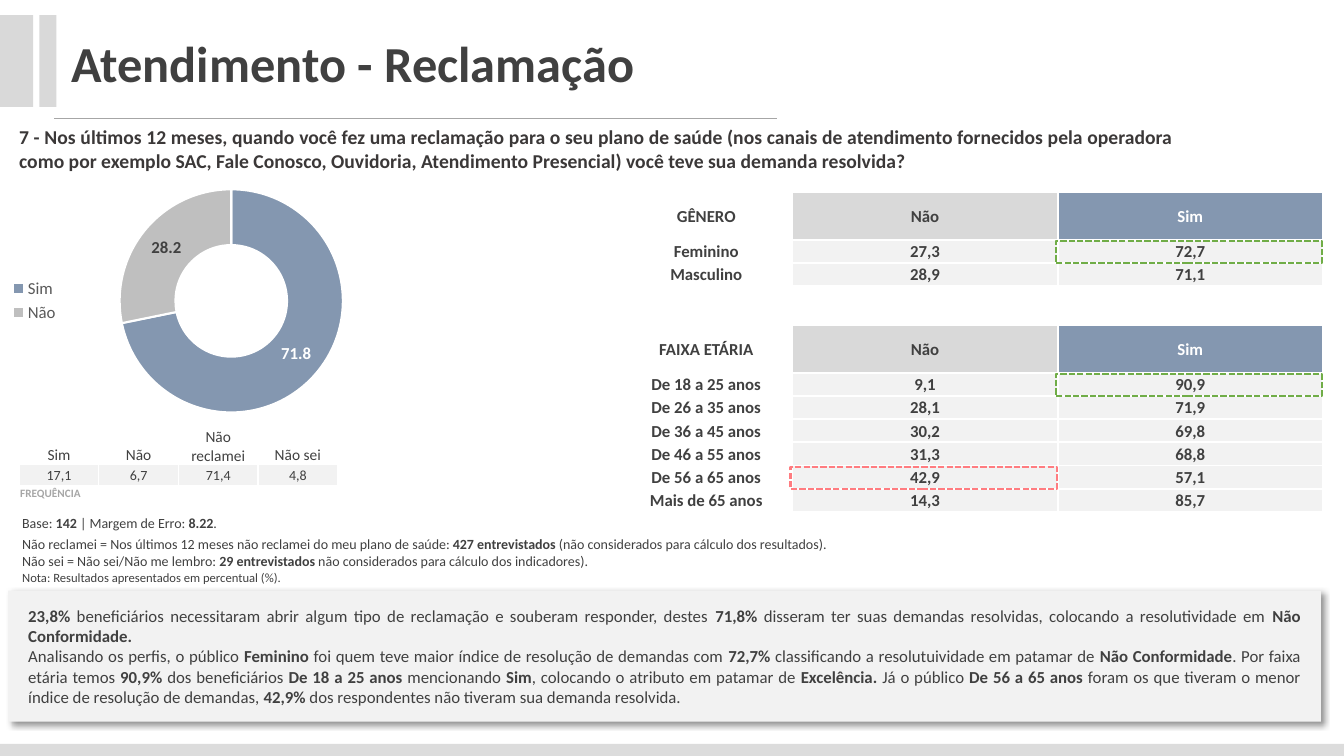
import dataclasses

import lxml.etree
import pptx
import pptx.chart.data
import pptx.dml.color
import pptx.enum.chart
import pptx.enum.dml
import pptx.enum.shapes
import pptx.enum.text
import pptx.oxml
import pptx.oxml.ns
import pptx.util

Inches = pptx.util.Inches
ALIGN = pptx.enum.text.PP_ALIGN
ANCHOR = pptx.enum.text.MSO_ANCHOR
DML = "http://schemas.openxmlformats.org/drawingml/2006/main"


@dataclasses.dataclass(frozen=True)
class Theme:
    font: str = "Calibri"
    dark: str = "404040"
    question: str = "3B3838"
    legend: str = "595959"
    muted: str = "A6A6A6"
    bar: str = "D9D9D9"
    footer: str = "DCDCDC"
    pale: str = "F2F2F2"
    white: str = "FFFFFF"
    yes: str = "8497B0"
    no: str = "BFBFBF"
    best: str = "70AD47"
    worst: str = "FF7C80"
    title_size: int = 36
    question_size: int = 14
    body_size: int = 12
    header_size: int = 11
    small_size: int = 10
    note_size: int = 9
    tag_size: int = 8


T = Theme()

QUESTION = ("7 - Nos últimos 12 meses, quando você fez uma reclamação para o seu plano de saúde "
            "(nos canais de atendimento fornecidos pela operadora como por exemplo SAC, Fale Conosco, "
            "Ouvidoria, Atendimento Presencial) você teve sua demanda resolvida?")
ANALYSIS = (
    "**23,8%** beneficiários necessitaram abrir algum tipo de reclamação e souberam responder, destes "
    "**71,8%** disseram ter suas demandas resolvidas, colocando a resolutividade em **Não Conformidade.**\n"
    "Analisando os perfis, o público **Feminino** foi quem teve maior índice de resolução de demandas com "
    "**72,7%** classificando a resolutuividade em patamar de **Não Conformidade**. Por faixa etária temos "
    "**90,9% **dos beneficiários **De 18 a 25 anos **mencionando **Sim**, colocando o atributo em patamar de "
    "**Excelência. **Já o público **De 56 a 65 anos **foram os que tiveram o menor índice de resolução de "
    "demandas, **42,9%** dos respondentes não tiveram sua demanda resolvida.")
NOTES = [
    "Base: **142** | Margem de Erro: **8.22**.",
    "Não reclamei = Nos últimos 12 meses não reclamei do meu plano de saúde: **427 entrevistados **"
    "(não considerados para cálculo dos resultados).\n"
    "Não sei = Não sei/Não me lembro: **29 entrevistados** não considerados para cálculo dos indicadores).",
    "Nota: Resultados apresentados em percentual (%).",
]
PROFILES = [
    ("GÊNERO", "Não", "Sim"),
    ("Feminino", "27,3", "72,7"),
    ("Masculino", "28,9", "71,1"),
    ("", "", ""),
    ("FAIXA ETÁRIA", "Não", "Sim"),
    ("De 18 a 25 anos", "9,1", "90,9"),
    ("De 26 a 35 anos", "28,1", "71,9"),
    ("De 36 a 45 anos", "30,2", "69,8"),
    ("De 46 a 55 anos", "31,3", "68,8"),
    ("De 56 a 65 anos", "42,9", "57,1"),
    ("Mais de 65 anos", "14,3", "85,7"),
]
FREQUENCIES = [("Sim", "Não", "Não reclamei", "Não sei"), ("17,1", "6,7", "71,4", "4,8")]


def rgb(value):
    return pptx.dml.color.RGBColor.from_string(value)


def set_font(font, size, color, bold=False):
    font.name, font.size, font.bold = T.font, pptx.util.Pt(size), bold
    font.color.rgb = rgb(color)


def write(tf, text, size=T.body_size, color=T.dark, bold=False, align=ALIGN.LEFT):
    for i, line in enumerate(text.split("\n")):
        p = tf.add_paragraph() if i else tf.paragraphs[0]
        p.alignment = align
        for j, part in enumerate(line.split("**")):
            if part:
                r = p.add_run()
                r.text = part
                set_font(r.font, size, color, bold or j % 2 == 1)
        if not line:
            end = lxml.etree.SubElement(p._p, pptx.oxml.ns.qn("a:endParaRPr"))
            end.set("sz", str(size * 100))


def set_frame(tf, x, y, anchor=ANCHOR.TOP):
    tf.word_wrap, tf.vertical_anchor = True, anchor
    tf.margin_left = tf.margin_right = Inches(x)
    tf.margin_top = tf.margin_bottom = Inches(y)


def add_rect(s, left, top, width, height, fill=None, line=None):
    sp = s.shapes.add_shape(pptx.enum.shapes.MSO_SHAPE.RECTANGLE,
                            Inches(left), Inches(top), Inches(width), Inches(height))
    sp.shadow.inherit = False
    if fill:
        sp.fill.solid()
        sp.fill.fore_color.rgb = rgb(fill)
    else:
        sp.fill.background()
    if line:
        sp.line.color.rgb = rgb(line)
        sp.line.width = pptx.util.Pt(1.5)
        sp.line.dash_style = pptx.enum.dml.MSO_LINE.SQUARE_DOT
    else:
        sp.line.fill.background()
    return sp


def add_shadow(sp):
    effects = sp._element.spPr.find(pptx.oxml.ns.qn("a:effectLst"))
    effects.append(pptx.oxml.parse_xml(
        f'<a:outerShdw xmlns:a="{DML}" blurRad="{pptx.util.Pt(4)}" dist="{pptx.util.Pt(3)}" dir="2700000" '
        'algn="tl" rotWithShape="0"><a:srgbClr val="000000"><a:alpha val="40000"/></a:srgbClr></a:outerShdw>'))


def add_rule(s, x1, x2, y):
    c = s.shapes.add_connector(pptx.enum.shapes.MSO_CONNECTOR.STRAIGHT,
                               Inches(x1), Inches(y), Inches(x2), Inches(y))
    c.line.color.rgb = rgb(T.muted)
    c.line.width = pptx.util.Pt(0.5)
    lxml.etree.SubElement(c._element.spPr, pptx.oxml.ns.qn("a:effectLst"))


def add_table(s, left, top, cols, rows):
    table = s.shapes.add_table(len(rows), len(cols), Inches(left), Inches(top),
                               Inches(sum(cols)), Inches(sum(rows))).table
    table.first_row = table.horz_banding = False
    for col, width in zip(table.columns, cols):
        col.width = Inches(width)
    for row, height in zip(table.rows, rows):
        row.height = Inches(height)
    return table


def fill_cell(cell, text, fill=None, border=None, anchor=ANCHOR.MIDDLE, **fmt):
    cell.margin_left = cell.margin_right = cell.margin_top = Inches(0.01)
    cell.margin_bottom = 0
    cell.vertical_anchor = anchor
    if border:
        for side in ("lnL", "lnR", "lnT", "lnB"):
            cell._tc.get_or_add_tcPr().append(pptx.oxml.parse_xml(
                f'<a:{side} xmlns:a="{DML}" w="{pptx.util.Pt(border)}"><a:solidFill>'
                f'<a:srgbClr val="{T.white}"/></a:solidFill></a:{side}>'))
    if fill:
        cell.fill.solid()
        cell.fill.fore_color.rgb = rgb(fill)
    else:
        cell.fill.background()
    write(cell.text_frame, text, **fmt)


def add_profiles(s):
    left, top, cols = 6.15, 1.91, [1.71, 2.63, 2.63]
    rows = [0.47 if row[1] == "Não" else 0.23 if row[0] else 0.39 for row in PROFILES]
    table = add_table(s, left, top, cols, rows)
    for i, row in enumerate(PROFILES):
        fills = (None, T.bar, T.yes) if row[1] == "Não" else (None, T.pale, T.pale)
        for j, text in enumerate(row):
            fill_cell(table.cell(i, j), text, fills[j] if text else None, 1.5 if j else None, bold=True,
                      color=T.white if text == "Sim" else T.dark, align=ALIGN.CENTER)
    for i, j, color in ((9, 1, T.worst), (5, 2, T.best), (1, 2, T.best)):
        add_rect(s, left + sum(cols[:j]) - 0.02, top + sum(rows[:i]) + 0.01, 2.64, 0.22, line=color)


def add_notes(s):
    table = add_table(s, 0.21, 5.1, [4.06] * 2, [0.21, 0.34, 0.21])
    for i in (0, 1):
        table.cell(i, 0).merge(table.cell(i, 1))
    for i, (text, size) in enumerate(zip(NOTES, (T.small_size, T.small_size, T.note_size))):
        for j, content in enumerate((text, "")):
            fill_cell(table.cell(i, j), content, anchor=ANCHOR.TOP, size=size)


def add_frequencies(s):
    table = add_table(s, 0.19, 4.23, [0.79] * 4, [0.33, 0.21, 0.21])
    for j, (name, value) in enumerate(zip(*FREQUENCIES)):
        fill_cell(table.cell(0, j), name, border=1, anchor=ANCHOR.BOTTOM, size=T.header_size, align=ALIGN.CENTER)
        fill_cell(table.cell(1, j), value, T.pale, 1, size=T.small_size, align=ALIGN.CENTER)
    table.cell(2, 0).merge(table.cell(2, 2))
    for j, text in enumerate(("FREQUÊNCIA", "", "", "")):
        fill_cell(table.cell(2, j), text, border=1, anchor=ANCHOR.TOP, size=T.tag_size, color=T.muted, bold=True)


def add_doughnut(s):
    data = pptx.chart.data.CategoryChartData(number_format="0.0")
    data.categories = ["Sim", "Não"]
    data.add_series("Series 1", (71.8, 28.2))
    chart = s.shapes.add_chart(pptx.enum.chart.XL_CHART_TYPE.DOUGHNUT, Inches(0), Inches(1.74),
                               Inches(3.98), Inches(2.49), data).chart
    chart.has_title = False
    set_font(chart.font, T.small_size, T.dark)
    chart.has_legend = True
    chart.legend.position = pptx.enum.chart.XL_LEGEND_POSITION.LEFT
    chart.legend.include_in_layout = False
    set_font(chart.legend.font, T.body_size, T.legend)
    plot = chart.plots[0]
    plot.vary_by_categories = True
    series = plot.series[0]
    labels = series.data_labels
    labels.show_value, labels.show_percentage = True, False
    labels.number_format, labels.number_format_is_linked = "0.0", False
    set_font(labels.font, T.body_size, T.white, True)
    for i, color in enumerate((T.yes, T.no)):
        fmt = series.points[i].format
        fmt.fill.solid()
        fmt.fill.fore_color.rgb = rgb(color)
        fmt.line.color.rgb = rgb(T.white)
        fmt.line.width = pptx.util.Pt(1.5)
    set_font(series.points[1].data_label.font, T.body_size, T.dark, True)


def main():
    prs = pptx.Presentation()
    prs.slide_width, prs.slide_height = Inches(13.33), Inches(7.5)
    s = prs.slides.add_slide(prs.slide_layouts[5])

    add_rect(s, 0, 7.38, 13.33, 0.12, T.footer)
    add_rule(s, 0.54, 7.71, 1.17)
    for left, width in ((-0.01, 0.34), (0.39, 0.17)):
        add_rect(s, left, 0.15, width, 0.91, T.bar)

    title = s.shapes.title
    title.left, title.top, title.width, title.height = Inches(0.61), Inches(0.27), Inches(5.84), Inches(0.71)
    set_frame(title.text_frame, 0.1, 0.05)
    write(title.text_frame, "Atendimento - Reclamação", size=T.title_size, bold=True)

    question = s.shapes.add_textbox(Inches(0.08), Inches(1.18), Inches(11.67), Inches(0.58))
    set_frame(question.text_frame, 0.11, 0.06)
    write(question.text_frame, QUESTION, size=T.question_size, color=T.question, bold=True, align=ALIGN.JUSTIFY)

    add_profiles(s)
    add_notes(s)
    add_frequencies(s)
    add_doughnut(s)

    analysis = add_rect(s, 0.08, 5.86, 13.02, 1.3, T.pale)
    add_shadow(analysis)
    set_frame(analysis.text_frame, 0.2, 0.04, ANCHOR.MIDDLE)
    write(analysis.text_frame, ANALYSIS, align=ALIGN.JUSTIFY)

    prs.save("out.pptx")


if __name__ == "__main__":
    main()
